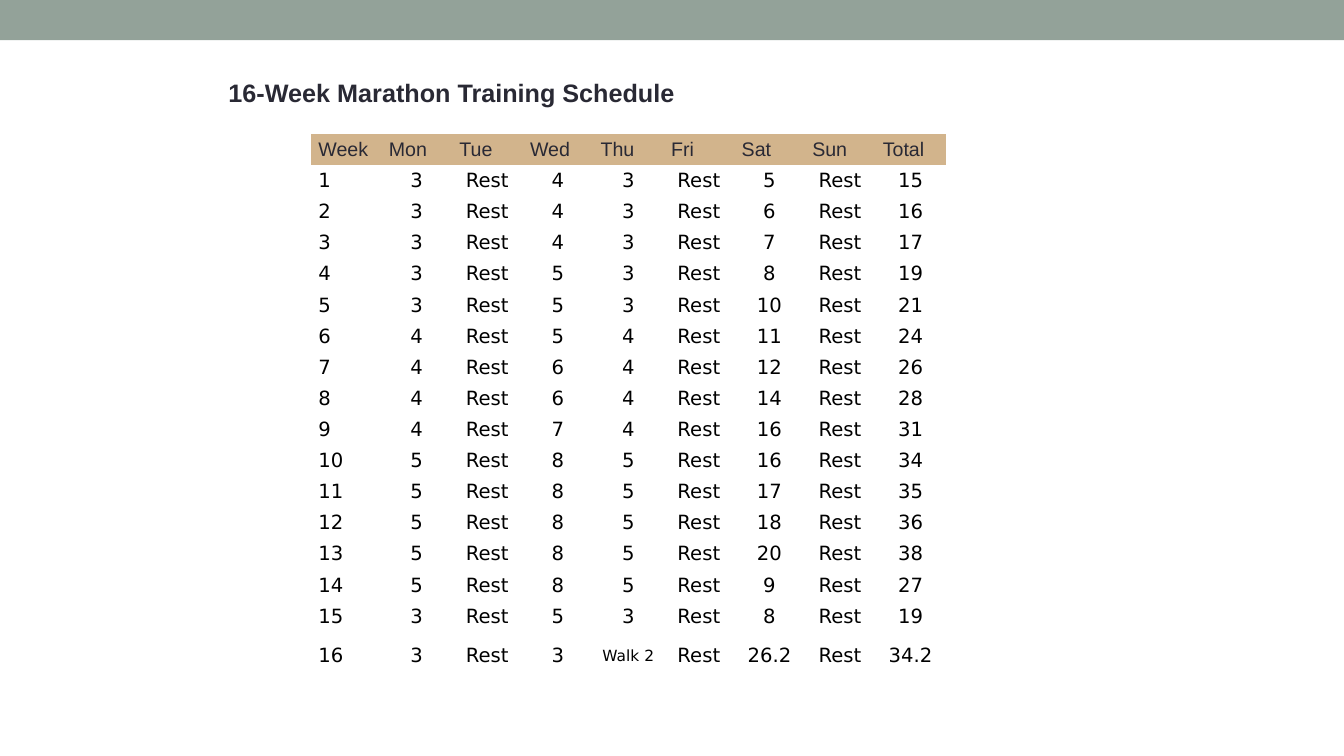
from pptx import Presentation
from pptx.dml.color import RGBColor
from pptx.enum.shapes import MSO_SHAPE
from pptx.enum.text import MSO_ANCHOR, MSO_AUTO_SIZE, PP_ALIGN
from pptx.oxml.ns import qn
from pptx.util import Pt

INK = "292934"
NO_STYLE_NO_GRID = "{2D5ABB26-0587-4C30-8999-92F81FD0307C}"

DAYS = ["Week", "Mon", "Tue", "Wed", "Thu", "Fri", "Sat", "Sun", "Total"]
# Monday, Wednesday, Thursday, Saturday and total miles; other days are rest
WEEKS = [
    (3, 4, 3, 5, 15),
    (3, 4, 3, 6, 16),
    (3, 4, 3, 7, 17),
    (3, 5, 3, 8, 19),
    (3, 5, 3, 10, 21),
    (4, 5, 4, 11, 24),
    (4, 6, 4, 12, 26),
    (4, 6, 4, 14, 28),
    (4, 7, 4, 16, 31),
    (5, 8, 5, 16, 34),
    (5, 8, 5, 17, 35),
    (5, 8, 5, 18, 36),
    (5, 8, 5, 20, 38),
    (5, 8, 5, 9, 27),
    (3, 5, 3, 8, 19),
    (3, 3, "Walk 2", 26.2, 34.2),
]


def rgb(color):
    return RGBColor.from_string(color)


def write(text_frame, text, size=14, font="Arial", color=INK, bold=False,
          align=PP_ALIGN.LEFT):
    paragraph = text_frame.paragraphs[0]
    paragraph.alignment = align
    run = paragraph.add_run()
    run.text = text
    run.font.size = Pt(size)
    run.font.name = font
    run.font.bold = bold
    run.font.color.rgb = rgb(color)


presentation = Presentation()
presentation.slide_width = Pt(960)
presentation.slide_height = Pt(540)
slide = presentation.slides.add_slide(presentation.slide_layouts[5])

band = slide.shapes.add_shape(MSO_SHAPE.RECTANGLE, 0, 0, Pt(960), Pt(28.8))
band.shadow.inherit = False
band.fill.solid()
band.fill.fore_color.rgb = rgb("93A299")
band.line.fill.background()

title = slide.shapes.title
title.left, title.top, title.width, title.height = Pt(156), Pt(51.4), Pt(336), Pt(29)
title.text_frame.word_wrap = False
title.text_frame.auto_size = MSO_AUTO_SIZE.SHAPE_TO_FIT_TEXT
title.text_frame.vertical_anchor = MSO_ANCHOR.MIDDLE
write(title.text_frame, "16-Week Marathon Training Schedule", size=18, bold=True)

rows = [DAYS]
for week, (mon, wed, thu, sat, total) in enumerate(WEEKS, start=1):
    rows.append([week, mon, "Rest", wed, thu, "Rest", sat, "Rest", total])

table = slide.shapes.add_table(
    len(rows), len(DAYS), Pt(222), Pt(95.8), Pt(453.6), Pt(346.5)).table
table.first_row = table.horz_banding = False
next(table._tbl.iter(qn("a:tableStyleId"))).text = NO_STYLE_NO_GRID
for column in table.columns:
    column.width = Pt(50.4)
for row in table.rows:
    row.height = Pt(19.5)
table.rows[len(WEEKS)].height = Pt(34.5)

for row_index, row in enumerate(rows):
    for column_index, value in enumerate(row):
        cell = table.cell(row_index, column_index)
        cell.vertical_anchor = MSO_ANCHOR.MIDDLE
        cell.margin_left = cell.margin_right = Pt(5.4)
        cell.margin_top = cell.margin_bottom = Pt(2.7)
        if row_index == 0:
            cell.fill.solid()
            cell.fill.fore_color.rgb = rgb("D2B48C")
            write(cell.text_frame, value)
        else:
            cell.fill.background()
            write(cell.text_frame, str(value), font="DejaVu Sans", color="000000",
                  size=11 if value == "Walk 2" else 14,
                  align=PP_ALIGN.CENTER if column_index else PP_ALIGN.LEFT)

presentation.save("out.pptx")
